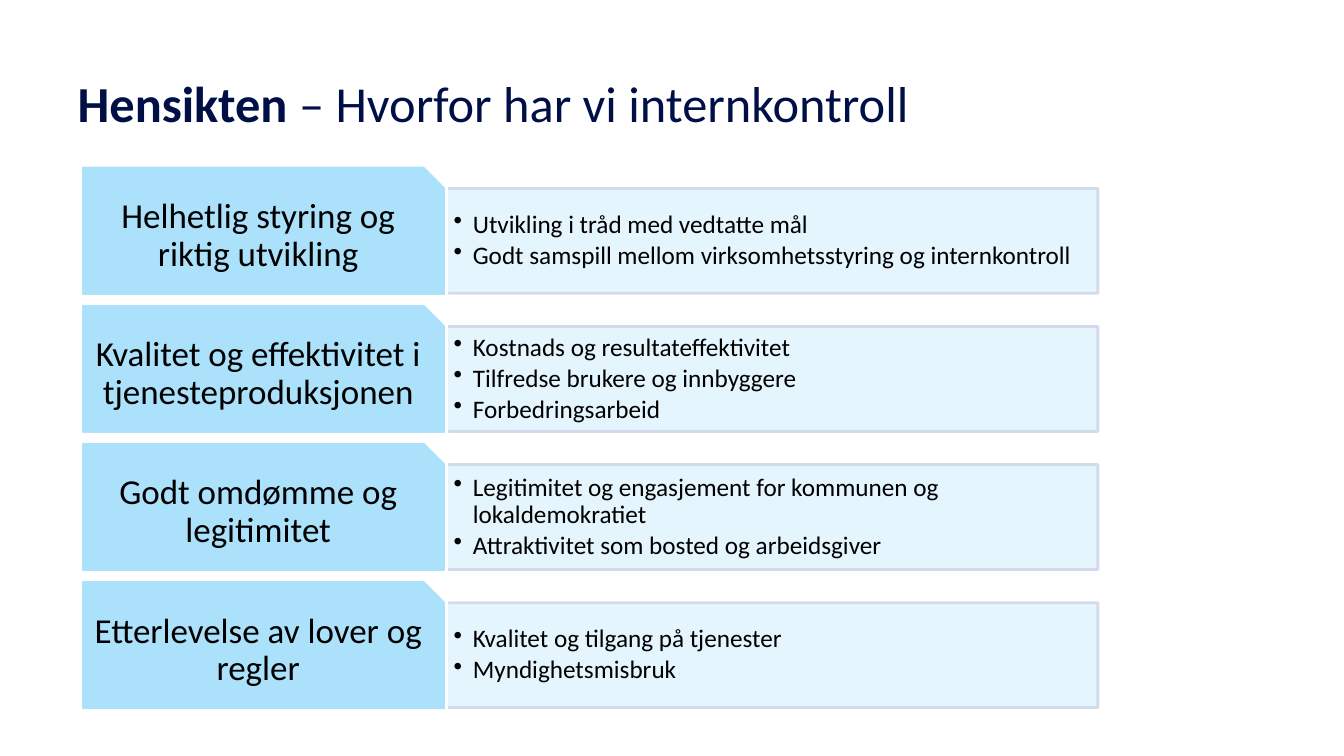
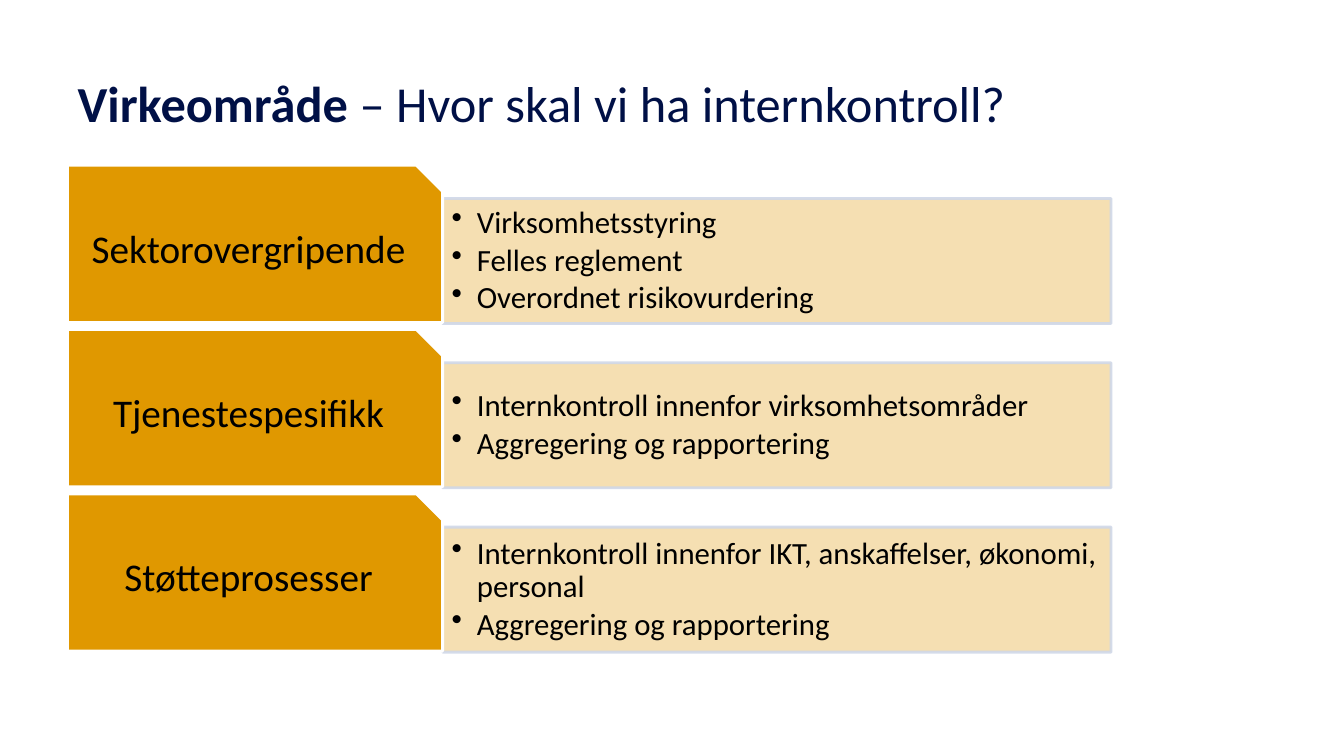
from pptx import Presentation
from pptx.dml.color import RGBColor
from pptx.enum.shapes import MSO_SHAPE as Shape
from pptx.enum.text import MSO_ANCHOR as Anchor, PP_ALIGN as Align
from pptx.oxml.ns import qn
from pptx.util import Pt
from lxml.etree import SubElement

SCALE = 9144
COLS = {"navy": "001046", "black": "000000", "white": "FFFFFF",
        "edge": "D0D8E8", "sky": "ABE1FA", "amber": "E09800"}

AIMS = {
    "title": ("Hensikten", " – Hvorfor har vi internkontroll"),
    "fill": "sky", "left": 80, "top": 164, "step": 137,
    "tab": (363, 130), "panel": (646, 104), "drop": 23,
    "tabpad": (10, 5), "pad": (7, 4), "dent": 19, "big": 25, "small": 18,
    "rows": [
        ("Helhetlig styring og riktig utvikling",
         ["Utvikling i tråd med vedtatte mål",
          "Godt samspill mellom virksomhetsstyring og internkontroll"]),
        ("Kvalitet og effektivitet i tjenesteproduksjonen",
         ["Kostnads og resultateffektivitet",
          "Tilfredse brukere og innbyggere",
          "Forbedringsarbeid"]),
        ("Godt omdømme og legitimitet",
         ["Legitimitet og engasjement for kommunen og lokaldemokratiet",
          "Attraktivitet som bosted og arbeidsgiver"]),
        ("Etterlevelse av lover og regler",
         ["Kvalitet og tilgang på tjenester",
          "Myndighetsmisbruk"]),
    ],
}
SCOPE = {
    "title": ("Virkeområde", " – Hvor skal vi ha internkontroll?"),
    "fill": "amber", "left": 67, "top": 164, "step": 163,
    "tab": (372, 156), "panel": (663, 124), "drop": 33,
    "tabpad": (12, 6), "pad": (9, 5), "dent": 25, "big": 28, "small": 22,
    "rows": [
        ("Sektorovergripende",
         ["Virksomhetsstyring",
          "Felles reglement",
          "Overordnet risikovurdering"]),
        ("Tjenestespesifikk",
         ["Internkontroll innenfor virksomhetsområder",
          "Aggregering og rapportering"]),
        ("Støtteprosesser",
         ["Internkontroll innenfor IKT, anskaffelser, økonomi, personal",
          "Aggregering og rapportering"]),
    ],
}


def px(num):
    """Turn px into EMU."""
    return num * SCALE


def apply(obj, vals):
    """Set each attribute in vals on obj."""
    for key, val in vals.items():
        setattr(obj, key, val)


def style(font, size, tint, bold=False):
    """Format a font."""
    apply(font, {"name": "Calibri", "size": Pt(size), "bold": bold})
    font.color.rgb = RGBColor.from_string(COLS[tint])


def paint(fill, tint, alpha):
    """Fill with a colour of the given opacity in percent."""
    fill.solid()
    fill.fore_color.rgb = RGBColor.from_string(COLS[tint])
    if alpha < 100:
        for clr in fill._xPr.iter(qn("a:srgbClr")):
            SubElement(clr, qn("a:alpha"), val=str(alpha * 1000))


def block(slide, kind, box, fill, line, pad):
    """Draw a padded shape and return its text frame."""
    shape = slide.shapes.add_shape(kind, *map(px, box))
    shape.shadow.inherit = False
    paint(shape.fill, *fill)
    paint(shape.line.fill, *line)
    shape.line.width = Pt(2)
    side, end = map(px, pad)
    frame = shape.text_frame
    apply(frame, {"word_wrap": True, "vertical_anchor": Anchor.MIDDLE,
                  "margin_left": side, "margin_right": side,
                  "margin_top": end, "margin_bottom": end})
    return frame


def write(para, text, size, align):
    """Put black text in a paragraph."""
    para.text = text
    apply(para, {"alignment": align, "line_spacing": 0.9})
    style(para.font, size, "black")


def bullet(para, dent):
    """Give a paragraph a hanging bullet."""
    props = para._p.get_or_add_pPr()
    props.set("marL", str(px(dent)))
    props.set("indent", str(-px(dent)))
    SubElement(props, qn("a:buChar"), char="•")


def row(slide, top, head, points, look):
    """Draw a panel of points and the tab to its left."""
    wide, high = look["tab"]
    left = look["left"]
    box = (left + wide, top + look["drop"], *look["panel"])
    frame = block(slide, Shape.RECTANGLE, box, (look["fill"], 30),
                  ("edge", 90), look["pad"])
    for num, text in enumerate(points):
        para = frame.add_paragraph() if num else frame.paragraphs[0]
        bullet(para, look["dent"])
        write(para, text, look["small"], Align.LEFT)
        para.space_after = Pt(round(look["small"] * 0.15, 1))
    frame = block(slide, Shape.SNIP_1_RECTANGLE, (left, top, wide, high),
                  (look["fill"], 100), ("white", 100), look["tabpad"])
    write(frame.paragraphs[0], head, look["big"], Align.CENTER)


def title(slide, parts):
    """Place the title with its first part bold."""
    shape = slide.shapes.title
    apply(shape, {"left": px(67), "top": px(40),
                  "width": px(1200), "height": px(124)})
    apply(shape.text_frame, {"word_wrap": True,
                             "vertical_anchor": Anchor.MIDDLE})
    para = shape.text_frame.paragraphs[0]
    para.alignment = Align.LEFT
    for num, text in enumerate(parts):
        run = para.add_run()
        run.text = text
        style(run.font, 36, "navy", num == 0)


def page(deck, look):
    """Add a slide with a title and rows of tabs."""
    slide = deck.slides.add_slide(deck.slide_layouts[5])
    title(slide, look["title"])
    for num, (head, points) in enumerate(look["rows"]):
        row(slide, look["top"] + num * look["step"], head, points, look)


def main():
    """Build and save the deck."""
    deck = Presentation()
    apply(deck, {"slide_width": px(1333), "slide_height": px(750)})
    for look in (AIMS, SCOPE):
        page(deck, look)
    deck.save("out.pptx")


if __name__ == "__main__":
    main()
